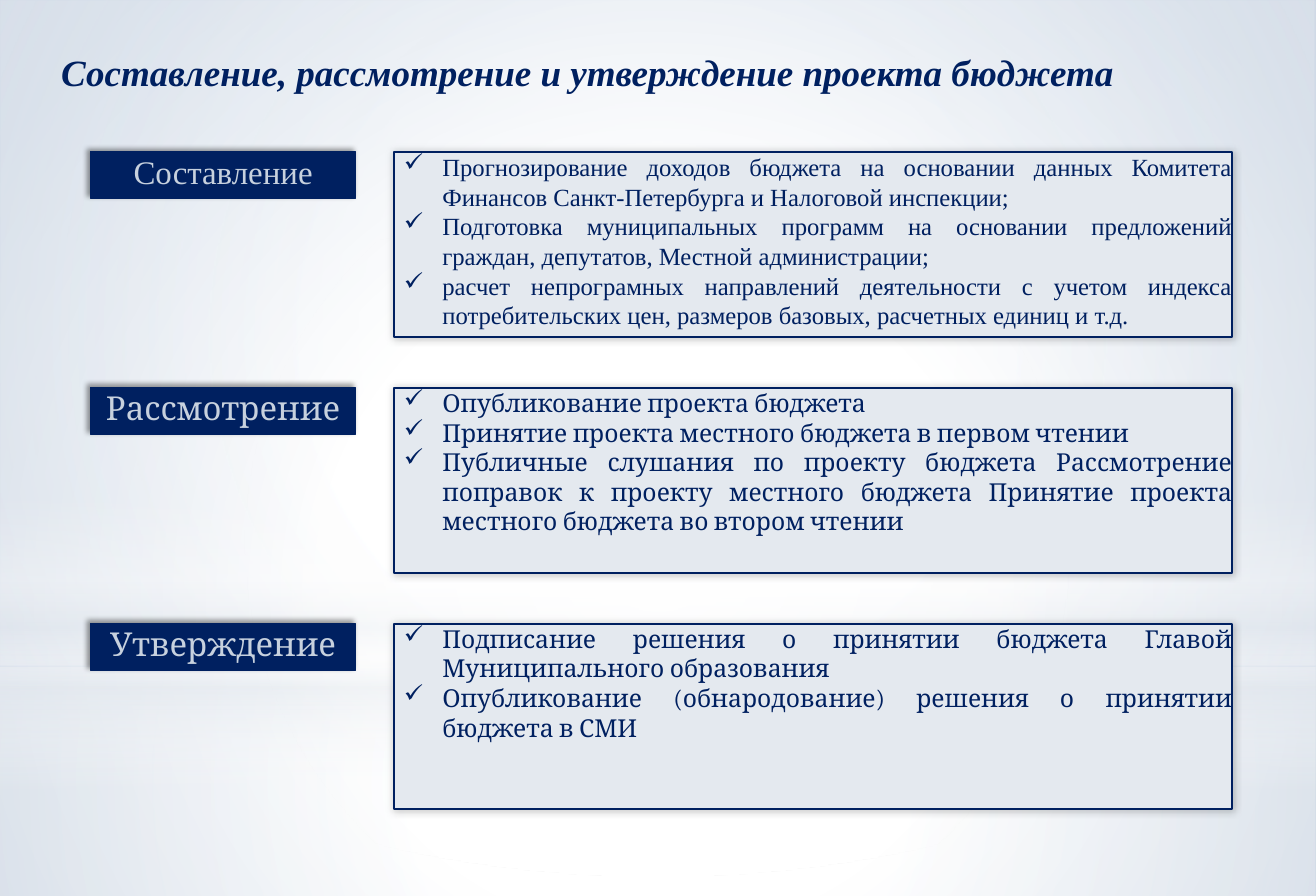
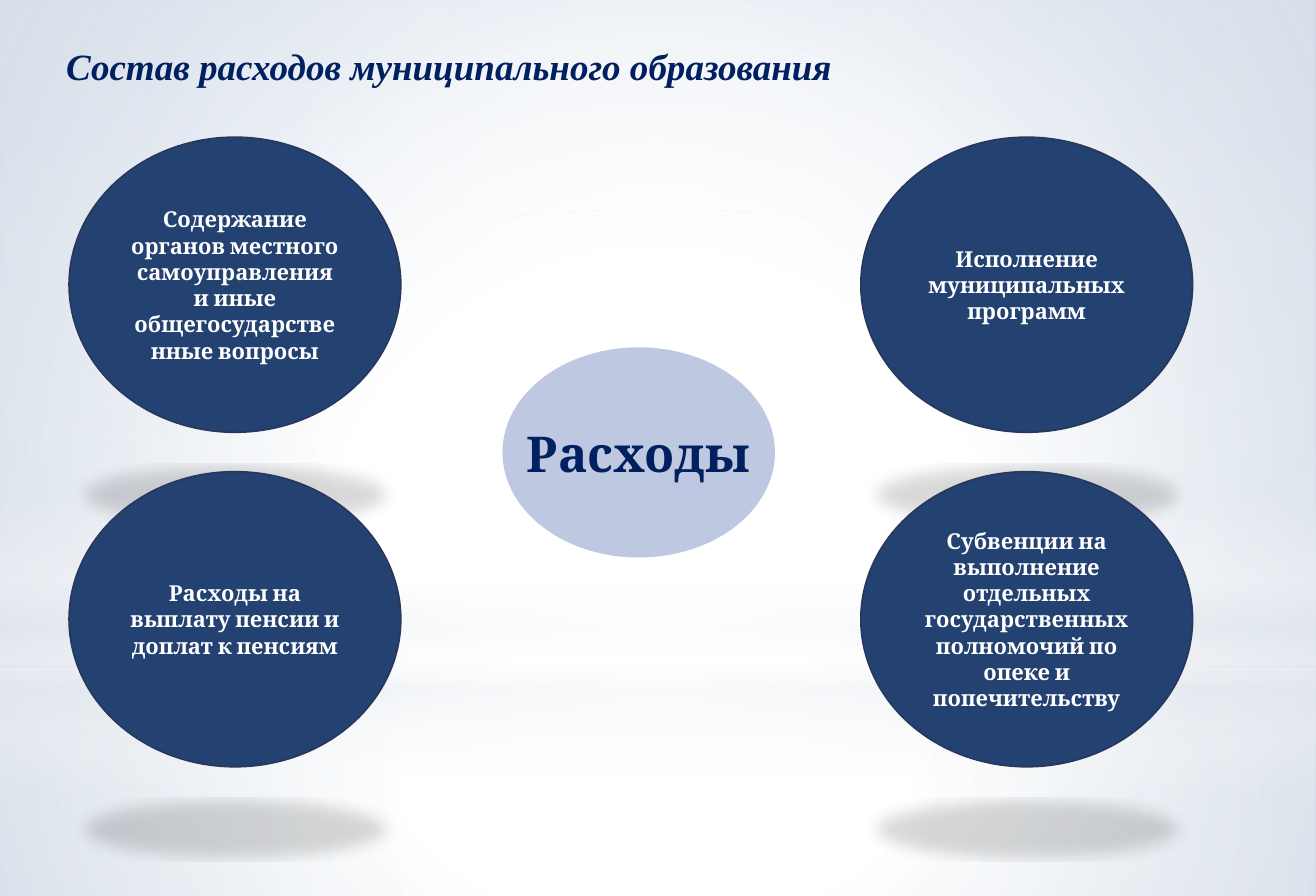
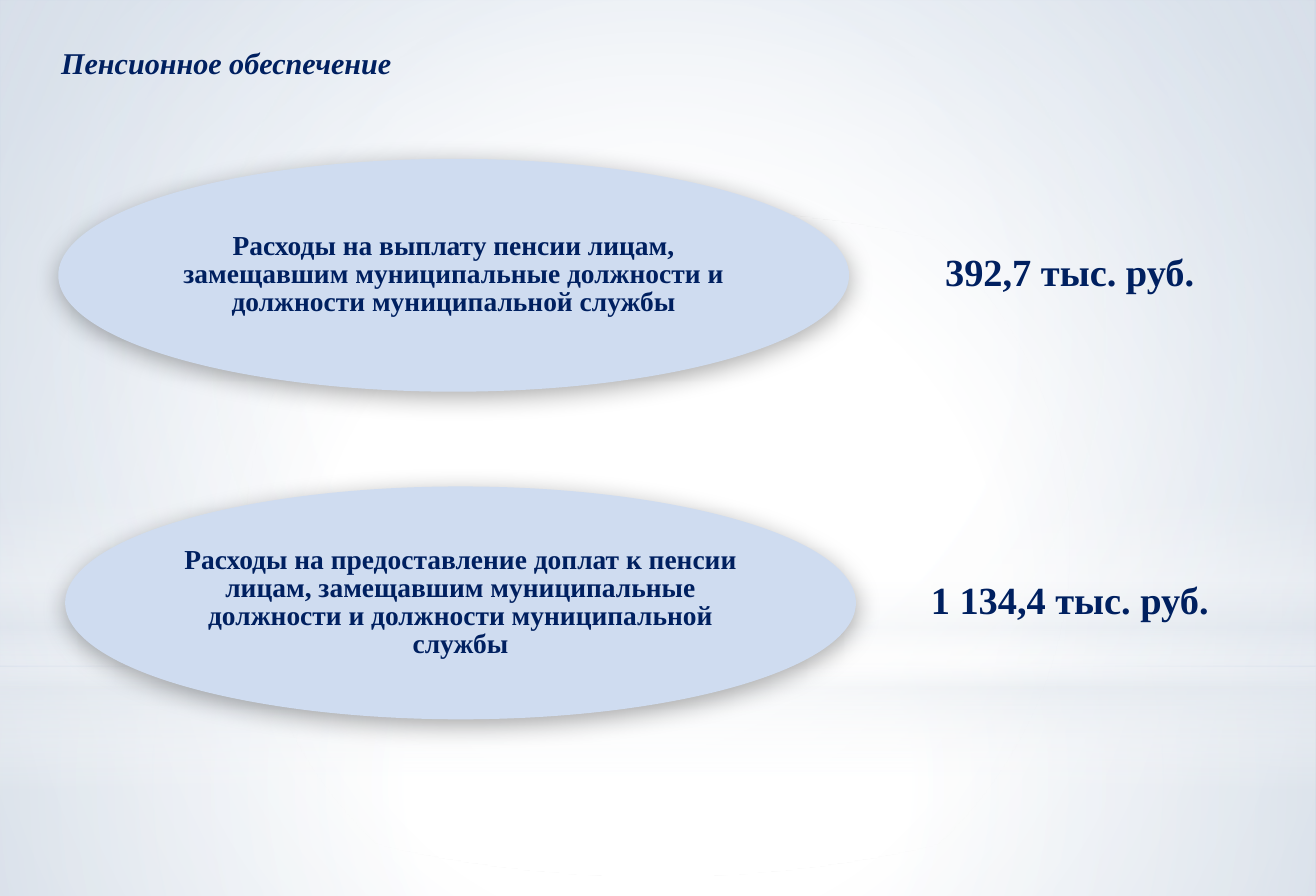
from pptx import Presentation
from pptx.dml.color import RGBColor
from pptx.enum.shapes import MSO_SHAPE as SHAPE
from pptx.enum.text import MSO_ANCHOR as ANCHOR, MSO_AUTO_SIZE as AUTO_SIZE, PP_ALIGN as ALIGN
from pptx.oxml import parse_xml
from pptx.oxml.ns import nsdecls, qn
from pptx.util import Inches, Pt

NAVY = RGBColor(0x00, 0x20, 0x60)
LABEL_TEXT = RGBColor(0xC7, 0xD1, 0xDE)
LIST_FILL = RGBColor(0xE4, 0xE9, 0xEF)
HUB_FILL = RGBColor(0xBF, 0xC8, 0xE1)
CIRCLE_FILL = RGBColor(0x23, 0x42, 0x71)
CIRCLE_LINE = RGBColor(0x2A, 0x37, 0x5D)
PENSION_FILL = RGBColor(0xCF, 0xDC, 0xF0)
WHITE = RGBColor(0xFF, 0xFF, 0xFF)
TIMES, CAMBRIA = "Times New Roman", "Cambria"

# Opacity %, blur pt, distance pt, direction in degrees, further attributes
LABEL_SHADOW = (40, 4, 3, 225, 'algn="tl"')
LIST_SHADOW = (20, 6, 0, 225, 'algn="tl"')
FLOOR_SHADOW = (15, 12, 25, 90, 'sx="90000" sy="-19000"')
PENSION_SHADOW = (33, 17.8, 4, 87, 'algn="tl"')


def add_panel(slide, kind, box, fill=None, line=None, shadow=None):
    """Add a preset shape; line is (colour, points), shadow one of the tuples above."""
    panel = slide.shapes.add_shape(kind, *[Inches(length) for length in box])
    panel.shadow.inherit = False
    if fill is None:
        panel.fill.background()
    else:
        panel.fill.solid()
        panel.fill.fore_color.rgb = fill
    if line is None:
        panel.line.fill.background()
    else:
        panel.line.color.rgb = line[0]
        panel.line.width = Pt(line[1])
    if shadow:
        opacity, blur, distance, angle, extra = shadow
        panel.element.spPr.find(qn("a:effectLst")).append(parse_xml(
            f'<a:outerShdw {nsdecls("a")} blurRad="{Pt(blur)}" dist="{Pt(distance)}" '
            f'dir="{angle * 60000}" {extra} rotWithShape="0"><a:srgbClr val="000000">'
            f'<a:alpha val="{opacity * 1000}"/></a:srgbClr></a:outerShdw>'))
    return panel


def write_text(shape, *lines, size, font=TIMES, color=NAVY, bold=False, align=ALIGN.CENTER,
               anchor=ANCHOR.TOP, inset=(0, 0), wrap=True, bullet=None,
               spacing=None, before=0, after=0):
    frame = shape.text_frame
    frame.word_wrap = wrap
    frame.vertical_anchor = anchor
    frame.margin_left = frame.margin_right = Inches(inset[0])
    frame.margin_top = frame.margin_bottom = Inches(inset[1])
    for number, line in enumerate(lines):
        paragraph = frame.add_paragraph() if number else frame.paragraphs[0]
        paragraph.alignment = align
        paragraph.line_spacing = spacing
        paragraph.space_before, paragraph.space_after = Pt(before), Pt(after)
        run = paragraph.add_run()
        run.text = line
        run.font.size, run.font.name, run.font.bold = Pt(size), font, bold
        run.font.color.rgb = color
        if bullet:
            properties = paragraph._p.get_or_add_pPr()
            properties.set("marL", str(Inches(0.49)))
            properties.set("indent", str(Inches(-0.39)))
            properties.append(parse_xml(f'<a:buChar {nsdecls("a")} char="{bullet}"/>'))


deck = Presentation()
deck.slide_width, deck.slide_height = Inches(13.33), Inches(9.08)
master = deck.slide_master

# Title style shared by all slides
title_frame = master.placeholders[0].text_frame
title_frame.auto_size = AUTO_SIZE.NONE
title_frame.vertical_anchor = ANCHOR.TOP
title_frame.margin_left = title_frame.margin_right = 0
title_frame.margin_top = title_frame.margin_bottom = 0
title_level = master.element.find(f'.//{qn("p:titleStyle")}/{qn("a:lvl1pPr")}')
title_level.set("algn", "l")
title_level.replace(title_level.find(qn("a:defRPr")), parse_xml(
    f'<a:defRPr {nsdecls("a")} sz="2700" b="1" i="1"><a:solidFill><a:srgbClr val="{NAVY}"/>'
    f'</a:solidFill><a:latin typeface="{TIMES}"/><a:cs typeface="{TIMES}"/></a:defRPr>'))

# Slides with their titles
slides = []
for title, left, top, size in [
    ("Составление, рассмотрение и утверждение проекта бюджета", 0.62, 0.5, None),
    ("Состав расходов муниципального образования", 0.67, 0.44, None),
    ("Пенсионное обеспечение", 0.62, 0.45, 22),
]:
    slide = deck.slides.add_slide(deck.slide_layouts[5])
    heading = slide.shapes.title
    heading.left, heading.top = Inches(left), Inches(top)
    heading.width, heading.height = Inches(11.19), Inches(0.44)
    heading.text_frame.text = title
    if size:
        heading.text_frame.paragraphs[0].runs[0].font.size = Pt(size)
    slides.append(slide)
stages, spending, pensions = slides

# Master background and translucent bands: stops are (position %, colour, opacity %)
CENTRE = (50, 50, 50, 50)
HAZE_STOPS = [(0, WHITE, 89), (48, WHITE, 62), (100, LIST_FILL, 79)]
FLOOR_STOPS = [(0, WHITE, 91), (37, WHITE, 76), (100, LIST_FILL, 79)]
HORIZON_STOPS = [(0, WHITE, 0), (29, WHITE, 30), (45, LIST_FILL, 40),
                 (55, WHITE, 26), (65, LIST_FILL, 60), (100, WHITE, 0)]
SKY_STOPS = [(0, WHITE, 100), (42, WHITE, 100), (100, RGBColor(0xAA, 0xBD, 0xD5), 100)]
GLOW_STOPS = [(0, WHITE, 100), (56, WHITE, 0)]
master_tree = master.element.find(f'{qn("p:cSld")}/{qn("p:spTree")}')
for index, (kind, box, stops, focus) in enumerate([
    (None, None, SKY_STOPS, (24, 44, 24, 12)),
    (SHAPE.RECTANGLE, (0, 6.76, 13.33, 2.32), FLOOR_STOPS, CENTRE),
    (SHAPE.RECTANGLE, (0, 0, 13.33, 6.76), HAZE_STOPS, CENTRE),
    (SHAPE.RECTANGLE, (0, 4.99, 13.33, 3.03), HORIZON_STOPS, None),
    (SHAPE.OVAL, (0, 2.12, 13.33, 6.76), GLOW_STOPS, CENTRE),
]):
    if kind is None:
        master.background.fill.background()
        holder = master.element.find(f'.//{qn("p:bgPr")}')
    else:
        band = add_panel(stages, kind, box).element
        band.nvSpPr.cNvPr.set("id", str(100 + index))
        master_tree.insert(1 + index, band)
        holder = band.spPr
    stop_xml = "".join(
        f'<a:gs pos="{position * 1000}"><a:srgbClr val="{color}">'
        f'<a:alpha val="{opacity * 1000}"/></a:srgbClr></a:gs>'
        for position, color, opacity in stops)
    if focus:
        sides = " ".join(f'{side}="{share * 1000}"' for side, share in zip("ltrb", focus))
        course = f'<a:path path="circle"><a:fillToRect {sides}/></a:path>'
    else:
        course = '<a:lin ang="5400000" scaled="0"/>'
    holder.replace(holder.find(qn("a:noFill")), parse_xml(
        f'<a:gradFill {nsdecls("a")} rotWithShape="1"><a:gsLst>{stop_xml}</a:gsLst>'
        f'{course}</a:gradFill>'))

# Budget stages
for row, (stage, font, steps) in enumerate([
    ("Составление", TIMES, [
        "Прогнозирование доходов бюджета на основании данных Комитета Финансов "
        "Санкт-Петербурга и Налоговой инспекции;",
        "Подготовка муниципальных программ на основании предложений граждан, депутатов, "
        "Местной администрации;",
        "расчет непрограмных направлений деятельности с учетом индекса потребительских цен, "
        "размеров базовых, расчетных единиц и т.д."]),
    ("Рассмотрение", CAMBRIA, [
        "Опубликование проекта бюджета",
        "Принятие проекта местного бюджета в первом чтении",
        "Публичные слушания по проекту бюджета Рассмотрение поправок к проекту местного "
        "бюджета Принятие проекта местного бюджета во втором чтении"]),
    ("Утверждение", CAMBRIA, [
        "Подписание решения о принятии бюджета Главой Муниципального образования",
        "Опубликование (обнародование) решения о принятии бюджета в СМИ"]),
]):
    top = 1.54 + 2.39 * row
    label = add_panel(stages, SHAPE.FLOWCHART_PROCESS, (0.92, top, 2.68, 0.47),
                      NAVY, (NAVY, 0.75), LABEL_SHADOW)
    write_text(label, stage, size=24, font=font, color=LABEL_TEXT, wrap=False)
    step_list = add_panel(stages, SHAPE.RECTANGLE, (3.99, top, 8.49, 1.88),
                          LIST_FILL, (NAVY, 1.5), LIST_SHADOW)
    write_text(step_list, *steps, size=18, font=font, align=ALIGN.JUSTIFY, bullet="✓")

# Spending groups around the hub
hub = add_panel(spending, SHAPE.OVAL, (5.09, 3.52, 2.76, 2.13), HUB_FILL)
write_text(hub, "Расходы", size=36, font=CAMBRIA, bold=True, anchor=ANCHOR.MIDDLE, wrap=False)
for index, (group, before) in enumerate([
    ("Содержание органов местного самоуправления и иные общегосударственные вопросы", 0),
    ("Исполнение муниципальных программ", 0),
    ("Расходы на выплату пенсии и доплат к пенсиям", 0),
    ("Субвенции на выполнение отдельных государственных полномочий по опеке и "
     "попечительству", 9.1),
]):
    row, column = divmod(index, 2)
    circle = add_panel(spending, SHAPE.FLOWCHART_CONNECTOR,
                       (0.7 + 8.02 * column, 1.39 + 3.39 * row, 3.36, 2.99),
                       CIRCLE_FILL, (CIRCLE_LINE, 1.25), FLOOR_SHADOW)
    write_text(circle, group, size=16, font=CAMBRIA, color=WHITE, bold=True,
               anchor=ANCHOR.MIDDLE, inset=(0.1, 0.05), before=before)

# Pension costs with their amounts
for row, (left, purpose, amount) in enumerate([
    (0.59, "Расходы на выплату пенсии лицам, замещавшим муниципальные должности и "
           "должности муниципальной службы", "392,7 тыс. руб."),
    (0.66, "Расходы на предоставление доплат к пенсии лицам, замещавшим муниципальные "
           "должности и должности муниципальной службы", "1 134,4 тыс. руб."),
]):
    offset = 3.32 * row
    oval = add_panel(pensions, SHAPE.FLOWCHART_CONNECTOR, (left, 1.61 + offset, 8.01, 2.36),
                     PENSION_FILL, shadow=PENSION_SHADOW)
    write_text(oval, purpose, size=20, bold=True, anchor=ANCHOR.MIDDLE, spacing=0.85, after=13.3)
    amount_box = pensions.shapes.add_textbox(
        Inches(9.31), Inches(2.54 + offset), Inches(3.05), Inches(0.5))
    write_text(amount_box, amount, size=28, bold=True, inset=(0.1, 0.05), wrap=False,
               spacing=0.85, after=13.3)

deck.save("out.pptx")
